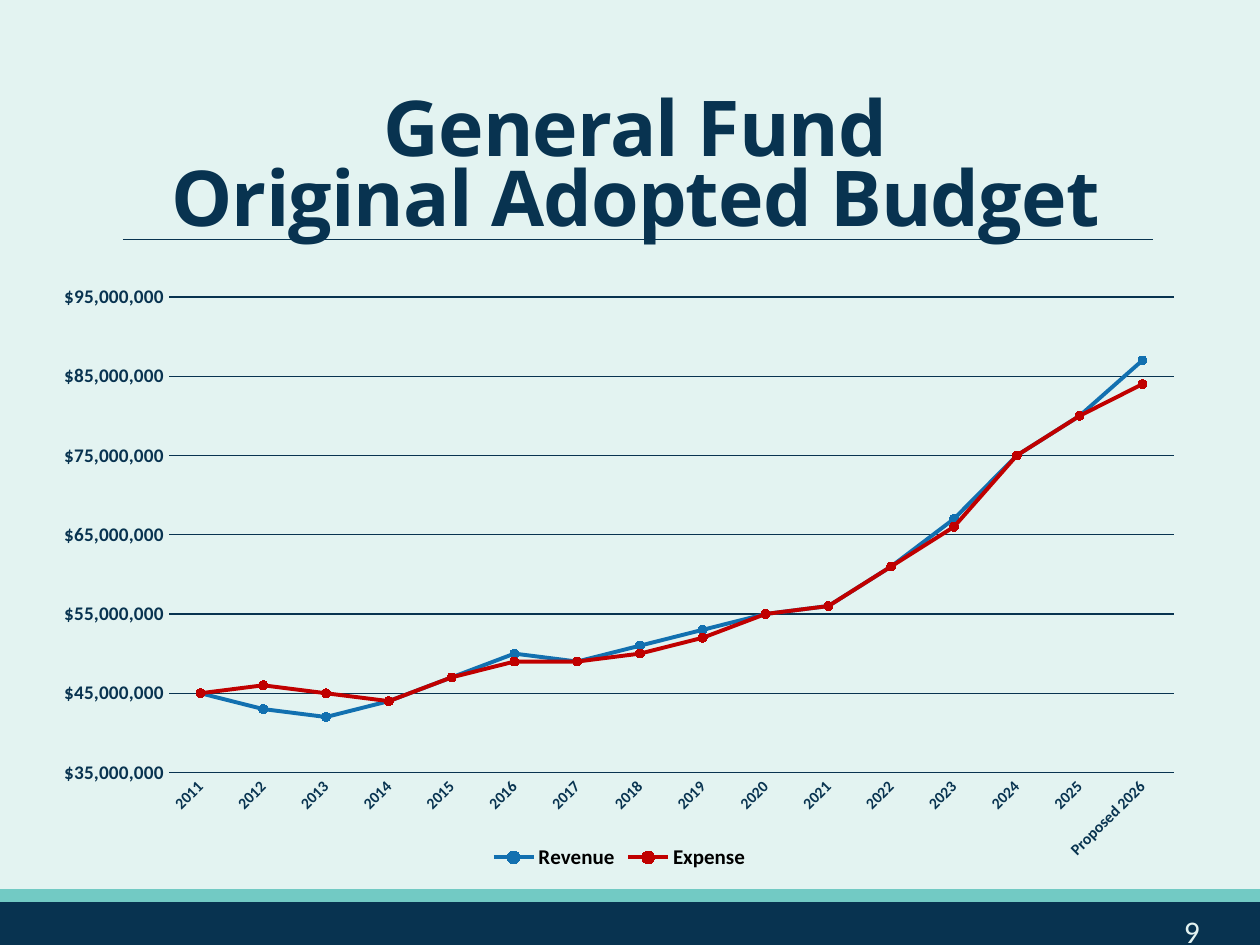
from lxml import etree
from pptx import Presentation
from pptx.chart.data import CategoryChartData
from pptx.dml.color import RGBColor
from pptx.enum.chart import XL_CHART_TYPE, XL_LEGEND_POSITION, XL_MARKER_STYLE, XL_TICK_MARK
from pptx.enum.shapes import MSO_CONNECTOR, MSO_SHAPE
from pptx.enum.text import MSO_ANCHOR, PP_ALIGN
from pptx.oxml import parse_xml
from pptx.oxml.ns import nsdecls, qn
from pptx.util import Pt

LINE = XL_CHART_TYPE.LINE_MARKERS
BOTTOM = XL_LEGEND_POSITION.BOTTOM
CIRCLE = XL_MARKER_STYLE.CIRCLE
NO_TICK = XL_TICK_MARK.NONE
RECT = MSO_SHAPE.RECTANGLE
STRAIGHT = MSO_CONNECTOR.STRAIGHT
CENTER = PP_ALIGN.CENTER

TITLE = ["General Fund", "Original Adopted Budget"]
PAGE = "9"
YEARS = [str(year) for year in range(2011, 2026)] + ["Proposed 2026"]
SERIES = [
    ("Revenue", "blue", [45, 43, 42, 44, 47, 50, 49, 51, 53, 55, 56, 61, 67, 75, 80, 87]),
    ("Expense", "red", [45, 46, 45, 44, 47, 49, 49, 50, 52, 55, 56, 61, 66, 75, 80, 84]),
]
MILLION = 1_000_000
AXIS = {"low": 35, "high": 95, "step": 10}
BANDS = [("navy", (0, 901, 1260, 44)), ("teal", (0, 890, 1260, 11))]
PLOT = {"x": 0.11, "y": 0.04, "w": 0.87, "h": 0.79}


class Theme:
    head, body = "Open Sans", "Calibri"
    color = {
        "back": "E3F3F1", "navy": "083350", "teal": "72CAC4",
        "blue": "1270B0", "red": "C00000", "black": "000000",
    }
    size = {"title": 44, "page": 18, "legend": 12, "value": 11, "year": 9, "chart": 10}

    @classmethod
    def rgb(cls, name):
        return RGBColor.from_string(cls.color[name])


def px(count):
    return round(count * 914400 / 126)


def box(*sides):
    return [px(side) for side in sides]


def paint(fill, name):
    fill.solid()
    fill.fore_color.rgb = Theme.rgb(name)


def stroke(line, name, width):
    line.color.rgb = Theme.rgb(name)
    line.width = Pt(width)


def style(font, size, name, face=Theme.body, bold=False):
    font.name, font.size, font.bold = face, Pt(Theme.size[size]), bold
    font.color.rgb = Theme.rgb(name)


def add_bands(slide):
    for name, sides in BANDS:
        band = slide.shapes.add_shape(RECT, *box(*sides))
        band.shadow.inherit = False
        paint(band.fill, name)
        stroke(band.line, name, 1.25)
    rule = slide.shapes.add_connector(STRAIGHT, *box(123, 239, 1153, 239))
    stroke(rule.line, "navy", 0.5)
    etree.SubElement(rule._element.spPr, qn("a:effectLst"))


def add_title(slide):
    title = slide.shapes.title
    title.left, title.top, title.width, title.height = box(105, 104, 1061, 136)
    frame = title.text_frame
    frame.word_wrap = True
    frame.vertical_anchor = MSO_ANCHOR.BOTTOM
    frame.margin_top = frame.margin_bottom = 0
    para = frame.paragraphs[0]
    para.alignment, para.line_spacing = CENTER, 0.75
    for row, text in enumerate(TITLE):
        if row:
            para.add_line_break()
        run = para.add_run()
        run.text = text
        style(run.font, "title", "navy", Theme.head, True)
        run._r.get_or_add_rPr().set("spc", "-50")


def add_page(slide):
    frame = slide.shapes.add_textbox(*box(1124, 906, 136, 39)).text_frame
    frame.word_wrap = True
    para = frame.paragraphs[0]
    para.alignment = CENTER
    run = para.add_run()
    run.text = PAGE
    style(run.font, "page", "back")


def set_axes(chart):
    years, money = chart.category_axis, chart.value_axis
    for axis, size in ((years, "year"), (money, "value")):
        axis.major_tick_mark = axis.minor_tick_mark = NO_TICK
        style(axis.tick_labels.font, size, "navy", bold=True)
    years.has_major_gridlines = False
    stroke(years.format.line, "navy", 0.75)
    years._element.find(qn("c:txPr")).find(qn("a:bodyPr")).set("rot", "-2700000")
    money.minimum_scale = AXIS["low"] * MILLION
    money.maximum_scale = AXIS["high"] * MILLION
    money.major_unit = AXIS["step"] * MILLION
    money.format.line.fill.background()
    stroke(money.major_gridlines.format.line, "navy", 0.75)
    money.tick_labels.number_format = '"$"#,##0'
    money.tick_labels.number_format_is_linked = False


def set_plot(chart):
    area = chart._chartSpace.chart.plotArea
    for old in area.findall(qn("c:layout")):
        area.remove(old)
    modes = '<c:layoutTarget val="inner"/><c:xMode val="edge"/><c:yMode val="edge"/>'
    parts = "".join(f'<c:{key} val="{val}"/>' for key, val in PLOT.items())
    area.insert(0, parse_xml(
        f'<c:layout {nsdecls("c")}><c:manualLayout>{modes}{parts}</c:manualLayout></c:layout>'))


def add_graph(slide):
    data = CategoryChartData(number_format='"$"#,##0')
    data.categories = YEARS
    for name, _, vals in SERIES:
        data.add_series(name, [val * MILLION for val in vals])
    chart = slide.shapes.add_chart(LINE, *box(42, 273, 1155, 602), data).chart
    chart.has_title = False
    style(chart.font, "chart", "navy")
    chart.has_legend = True
    chart.legend.position = BOTTOM
    chart.legend.include_in_layout = False
    style(chart.legend.font, "legend", "black", bold=True)
    plot = chart.plots[0]
    plot.vary_by_categories = False
    for series, (_, name, _) in zip(plot.series, SERIES):
        series.smooth = False
        stroke(series.format.line, name, 2.25)
        mark = series.marker
        mark.style, mark.size = CIRCLE, 5
        paint(mark.format.fill, name)
        stroke(mark.format.line, name, 0.75)
    set_axes(chart)
    set_plot(chart)


def main():
    deck = Presentation()
    deck.slide_width, deck.slide_height = px(1260), px(945)
    slide = deck.slides.add_slide(deck.slide_layouts[5])
    paint(slide.background.fill, "back")
    add_bands(slide)
    add_title(slide)
    add_graph(slide)
    add_page(slide)
    deck.save("out.pptx")


if __name__ == "__main__":
    main()
